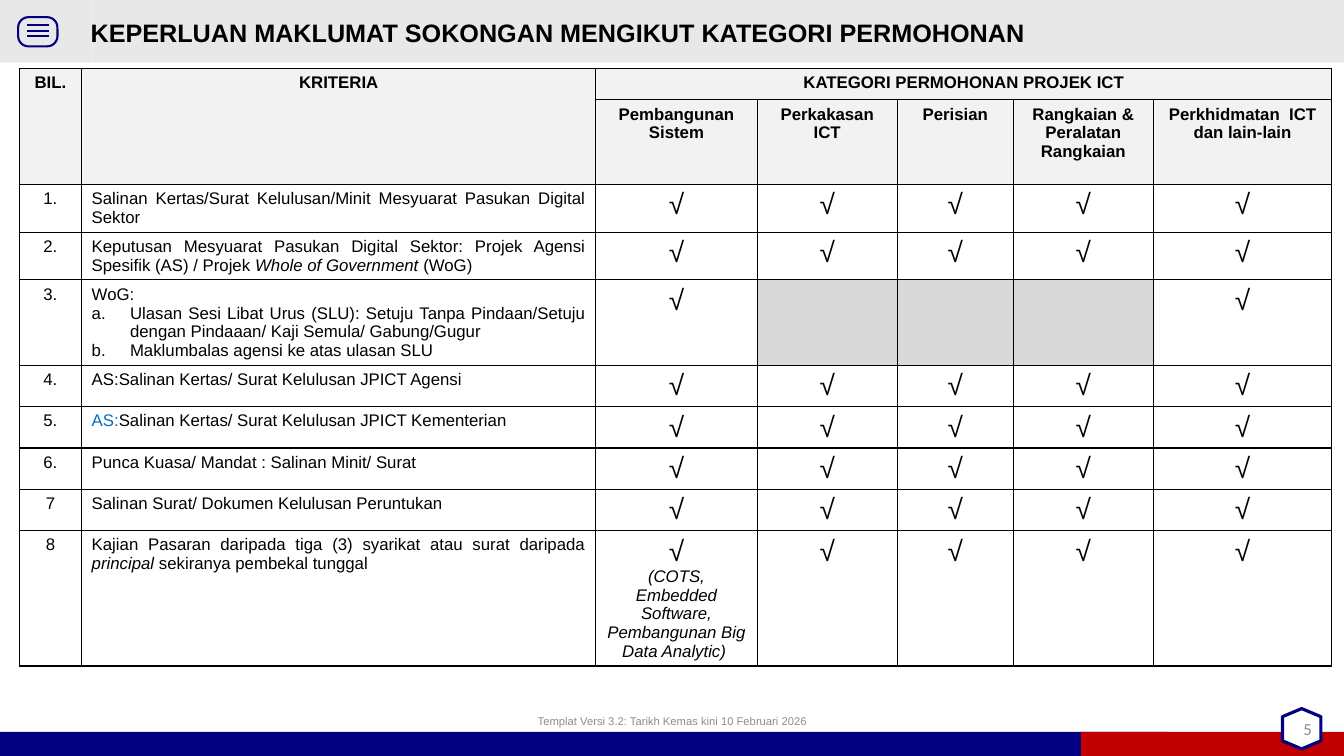
from dataclasses import dataclass

from lxml import etree
from pptx import Presentation
from pptx.dml.color import RGBColor
from pptx.enum.shapes import MSO_CONNECTOR, MSO_SHAPE
from pptx.enum.text import MSO_ANCHOR, PP_ALIGN
from pptx.oxml.ns import qn
from pptx.util import Inches, Pt

RECT, ROUND = MSO_SHAPE.RECTANGLE, MSO_SHAPE.ROUNDED_RECTANGLE
HEXAGON = MSO_SHAPE.FLOWCHART_PREPARATION
STRAIGHT = MSO_CONNECTOR.STRAIGHT
MIDDLE = MSO_ANCHOR.MIDDLE
LEFT, CENTER = PP_ALIGN.LEFT, PP_ALIGN.CENTER
RIGHT, JUST = PP_ALIGN.RIGHT, PP_ALIGN.JUSTIFY
NAVY, RED, GREY = "000080", "C00000", "E8E8E8"
HEAD, SHADE, FAINT = "F2F2F2", "D9D9D9", "8C8C8C"
BLACK, WHITE, BLUE = "000000", "FFFFFF", "0070C0"


@dataclass
class Run:
    text: str
    size: float = 12
    color: str = BLACK
    bold: bool = False
    italic: bool = False
    name: str = "Arial"


@dataclass
class Para:
    runs: list[Run]
    align: PP_ALIGN = JUST
    listed: bool = False


@dataclass
class Box:
    area: tuple
    kind: MSO_SHAPE = RECT
    fill: str | None = None
    line: str | None = None
    width: float = 0
    turn: float = 0


@dataclass
class Label:
    area: tuple
    para: Para


def rgb(color: str) -> RGBColor:
    return RGBColor.from_string(color)


def paint(fill, color: str | None) -> None:
    if color:
        fill.solid()
        fill.fore_color.rgb = rgb(color)
    else:
        fill.background()


def draw_box(shapes, box: Box):
    shape = shapes.add_shape(box.kind, *map(Inches, box.area))
    shape.shadow.inherit = False
    shape.rotation = box.turn
    paint(shape.fill, box.fill)
    paint(shape.line.fill, box.line)
    if box.line:
        shape.line.width = Pt(box.width)
    return shape


def draw_menu(slide) -> None:
    group = slide.shapes.add_group_shape()
    frame = draw_box(group.shapes, Box((0.18, 0.17, 0.39, 0.29), ROUND, None, NAVY, 1.5))
    frame.adjustments[0] = 0.353
    for step in range(3):
        y = 0.25 + step * 0.055
        bar = group.shapes.add_connector(STRAIGHT, *map(Inches, (0.27, y, 0.49, y)))
        bar.line.color.rgb = rgb(NAVY)
        bar.line.width = Pt(1.5)
        etree.SubElement(bar._element.spPr, qn("a:effectLst"))


def write(frame, paras: list[Para]) -> None:
    for n, item in enumerate(paras):
        para = frame.add_paragraph() if n else frame.paragraphs[0]
        para.alignment = item.align
        if item.listed:
            props = para._p.get_or_add_pPr()
            props.set("marL", str(Inches(0.38)))
            props.set("indent", str(Inches(-0.38)))
            etree.SubElement(props, qn("a:buAutoNum"), type="alphaLcPeriod")
        for part in item.runs:
            run = para.add_run()
            run.text = part.text
            style = {"size": Pt(part.size), "bold": part.bold,
                     "italic": part.italic, "name": part.name}
            for key, value in style.items():
                setattr(run.font, key, value)
            run.font.color.rgb = rgb(part.color)


def draw_label(slide, label: Label) -> None:
    frame = slide.shapes.add_textbox(*map(Inches, label.area)).text_frame
    frame.word_wrap = True
    frame.vertical_anchor = MIDDLE
    write(frame, [label.para])


def edge(cell) -> None:
    """Give the cell a thin black border on every side."""
    props = cell._tc.get_or_add_tcPr()
    for n, side in enumerate(("lnL", "lnR", "lnT", "lnB")):
        line = etree.Element(qn(f"a:{side}"), w=str(Pt(1)))
        fill = etree.SubElement(line, qn("a:solidFill"))
        etree.SubElement(fill, qn("a:srgbClr"), val=BLACK)
        props.insert(n, line)


def head(text: str) -> list[Para]:
    return [Para([Run(text, bold=True)], CENTER)]


def plain(text: str) -> list[Para]:
    return [Para([Run(text)])]


BOXES = [
    Box((0, 0, 0.92, 0.62), fill=GREY),
    Box((0, 7.26, 11.58, 0.24), fill=NAVY),
    Box((10.72, 7.26, 2.62, 0.24), fill=RED),
    Box((0.92, 0, 12.42, 0.62), fill=GREY),
    Box((12.71, 7.04, 0.4, 0.38), HEXAGON, WHITE, NAVY, 2.25, 90),
]
LABELS = [
    Label((10.11, 7.03, 3, 0.4), Para([Run("5", 12, FAINT, name="Calibri")], RIGHT)),
    Label((0.8, 0.15, 11.61, 0.35), Para([Run(
        "KEPERLUAN MAKLUMAT SOKONGAN MENGIKUT KATEGORI PERMOHONAN", 18, bold=True)], LEFT)),
    Label((4.42, 6.95, 4.5, 0.4), Para([Run(
        "Templat Versi 3.2: Tarikh Kemas kini 10 Februari 2026", 8, FAINT)], CENTER)),
]
COLS = [0.62, 5.1, 1.6, 1.39, 1.15, 1.39, 1.77]
ROWS = [0.31, 0.84] + [0.35] * 4 + [0.4] * 4
TYPES = ["Pembangunan Sistem", "Perkakasan ICT", "Perisian",
         "Rangkaian & Peralatan Rangkaian", "Perkhidmatan  ICT dan lain-lain"]
NEEDS = [
    ("1.", plain("Salinan Kertas/Surat Kelulusan/Minit Mesyuarat Pasukan Digital Sektor ")),
    ("2.", [Para([
        Run("Keputusan Mesyuarat Pasukan Digital Sektor: Projek Agensi Spesifik (AS) / Projek "),
        Run("Whole of Government", italic=True), Run(" (WoG)")])]),
    ("3.", plain("WoG: ") + [
        Para([Run("Ulasan Sesi Libat Urus (SLU): Setuju Tanpa Pindaan/Setuju dengan "
                  "Pindaaan/ Kaji Semula/ Gabung/Gugur")], listed=True),
        Para([Run("Maklumbalas agensi ke atas ulasan SLU")], listed=True)]),
    ("4.", plain("AS:Salinan Kertas/ Surat Kelulusan JPICT Agensi")),
    ("5.", [Para([Run("AS:", color=BLUE),
                  Run("Salinan Kertas/ Surat Kelulusan JPICT Kementerian")])]),
    ("6.", plain("Punca Kuasa/ Mandat : Salinan Minit/ Surat")),
    ("7", plain("Salinan Surat/ Dokumen Kelulusan Peruntukan")),
    ("8", [Para([Run("Kajian Pasaran daripada tiga (3) syarikat atau surat daripada "),
                 Run("principal ", italic=True), Run("sekiranya pembekal tunggal")])]),
]
BLANKS = {(4, 3), (4, 4), (4, 5)}
TICK = Para([Run("√", 20)], CENTER)
NOTE = Para([Run("(COTS, Embedded Software, Pembangunan Big Data Analytic) ",
                 italic=True)], CENTER)


def draw_table(slide) -> None:
    area = (0.19, 0.68, sum(COLS), sum(ROWS))
    table = slide.shapes.add_table(len(ROWS), len(COLS), *map(Inches, area)).table
    table.first_row = table.horz_banding = False
    for col, width in zip(table.columns, COLS):
        col.width = Inches(width)
    for row, height in zip(table.rows, ROWS):
        row.height = Inches(height)

    texts = {(0, 0): head("BIL."), (0, 1): head("KRITERIA"),
             (0, 2): head("KATEGORI PERMOHONAN PROJEK ICT")}
    texts |= {(1, c): head(text) for c, text in enumerate(TYPES, 2)}
    for r, (mark, paras) in enumerate(NEEDS, 2):
        texts |= {(r, 0): [Para([Run(mark)], CENTER)], (r, 1): paras}
        texts |= {(r, c): [TICK] for c in range(2, len(COLS)) if (r, c) not in BLANKS}
    texts[9, 2] = [TICK, NOTE]

    for start, end in (((0, 0), (1, 0)), ((0, 1), (1, 1)), ((0, 2), (0, 6))):
        table.cell(*start).merge(table.cell(*end))
    for r in range(len(ROWS)):
        for c in range(len(COLS)):
            cell = table.cell(r, c)
            paint(cell.fill, HEAD if r < 2 else SHADE if (r, c) in BLANKS else None)
            edge(cell)
            write(cell.text_frame, texts.get((r, c), []))


def main() -> None:
    deck = Presentation()
    deck.slide_width, deck.slide_height = Inches(13.33), Inches(7.5)
    slide = deck.slides.add_slide(deck.slide_layouts[6])
    for box in BOXES:
        draw_box(slide.shapes, box)
    draw_menu(slide)
    draw_table(slide)
    for label in LABELS:
        draw_label(slide, label)
    deck.save("out.pptx")


if __name__ == "__main__":
    main()
